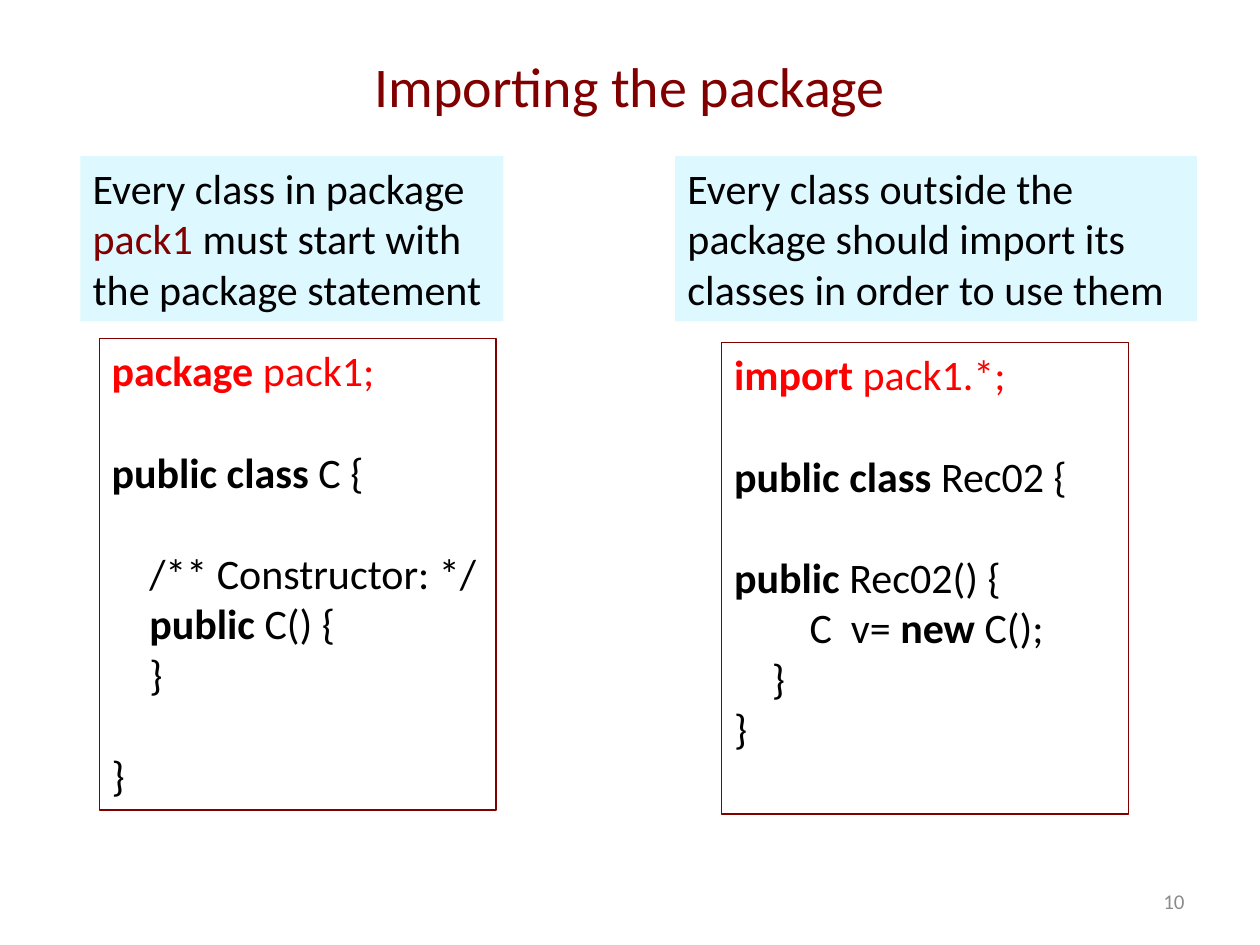
from pptx import Presentation
from pptx.dml.color import RGBColor
from pptx.enum.shapes import MSO_SHAPE
from pptx.enum.text import MSO_ANCHOR, PP_ALIGN
from pptx.util import Cm, Pt

COLORS = {
    "maroon": "800000",
    "red": "FF0000",
    "black": "000000",
    "gray": "8C8C8C",
    "pale": "DEF8FF",
}
FONT = "Calibri"
BODY_SIZE = 24
BLANK_LINE = Pt(29)
INDENT = Cm(0.76)

PACKAGE_CODE = [
    (0, False, "red", [("package ", True), ("pack1;", False)]),
    (0, True, "black", [("public class", True), (" C {", False)]),
    (1, True, "black", [("/** Constructor: */", False)]),
    (1, False, "black", [("public ", True), ("C() {", False)]),
    (1, False, "black", [("}", False)]),
    (0, True, "black", [("}", False)]),
]
IMPORT_CODE = [
    (0, False, "red", [("import ", True), ("pack1.*;", False)]),
    (0, True, "black", [("public class ", True), ("Rec02 {", False)]),
    (0, True, "black", [("public ", True), ("Rec02() {", False)]),
    (2, False, "black", [("C  v= ", False), ("new", True), (" C();", False)]),
    (1, False, "black", [("}", False)]),
    (0, False, "black", [("}", False)]),
]


def color(name):
    """Return the named colour."""
    return RGBColor.from_string(COLORS[name])


def style_font(para, size, color_name):
    """Set the font of a whole paragraph."""
    para.font.name = FONT
    para.font.size = Pt(size)
    para.font.color.rgb = color(color_name)


def add_label(page, text, place, size, color_name, align):
    """Add a single line of vertically centred text."""
    frame = page.shapes.add_textbox(*map(Cm, place)).text_frame
    frame.word_wrap = True
    frame.vertical_anchor = MSO_ANCHOR.MIDDLE
    para = frame.paragraphs[0]
    para.text = text
    para.alignment = align
    style_font(para, size, color_name)


def add_box(page, place, fill=None, line=None):
    """Add a rectangle and return its text frame, ready for left-aligned text."""
    box = page.shapes.add_shape(MSO_SHAPE.RECTANGLE, *map(Cm, place))
    box.shadow.inherit = False
    if fill:
        box.fill.solid()
        box.fill.fore_color.rgb = color(fill)
    else:
        box.fill.background()
    if line:
        box.line.color.rgb = color(line)
        box.line.width = Pt(0.75)
    else:
        box.line.fill.background()
    frame = box.text_frame
    frame.word_wrap = True
    frame.vertical_anchor = MSO_ANCHOR.TOP
    return frame


def add_note(page, place, spans):
    """Add a tinted note made of coloured spans."""
    para = add_box(page, place, fill="pale").paragraphs[0]
    para.alignment = PP_ALIGN.LEFT
    style_font(para, BODY_SIZE, "black")
    for text, color_name in spans:
        span = para.add_run()
        span.text = text
        span.font.color.rgb = color(color_name)


def add_code(page, place, lines):
    """Add a framed code listing with indents and gaps between blocks."""
    frame = add_box(page, place, line="maroon")
    for index, (level, gap, color_name, spans) in enumerate(lines):
        para = frame.add_paragraph() if index else frame.paragraphs[0]
        para.alignment = PP_ALIGN.LEFT
        style_font(para, BODY_SIZE, color_name)
        para.space_before = BLANK_LINE if gap else Pt(0)
        para._p.get_or_add_pPr().set("marL", str(level * INDENT))
        for text, bold in spans:
            span = para.add_run()
            span.text = text
            span.font.bold = bold


def main():
    """Build the slide and save it."""
    deck = Presentation()
    deck.slide_width, deck.slide_height = Cm(25.4), Cm(19.05)
    page = deck.slides.add_slide(deck.slide_layouts[6])
    add_label(page, "Importing the package", (1.27, 0.81, 22.86, 1.8),
              32, "maroon", PP_ALIGN.CENTER)
    add_label(page, "10", (18.2, 17.66, 5.93, 1.01), 12, "gray", PP_ALIGN.RIGHT)
    add_code(page, (14.55, 6.91, 8.2, 9.5), IMPORT_CODE)
    add_code(page, (2, 6.83, 8, 9.5), PACKAGE_CODE)
    add_note(page, (1.62, 3.15, 8.53, 3.33), [
        ("Every class in package ", "black"),
        ("pack1", "maroon"),
        (" must start with the package statement", "black"),
    ])
    add_note(page, (13.61, 3.15, 10.52, 3.33), [
        ("Every class outside the package should import its classes "
         "in order to use them", "black"),
    ])
    deck.save("out.pptx")


if __name__ == "__main__":
    main()
